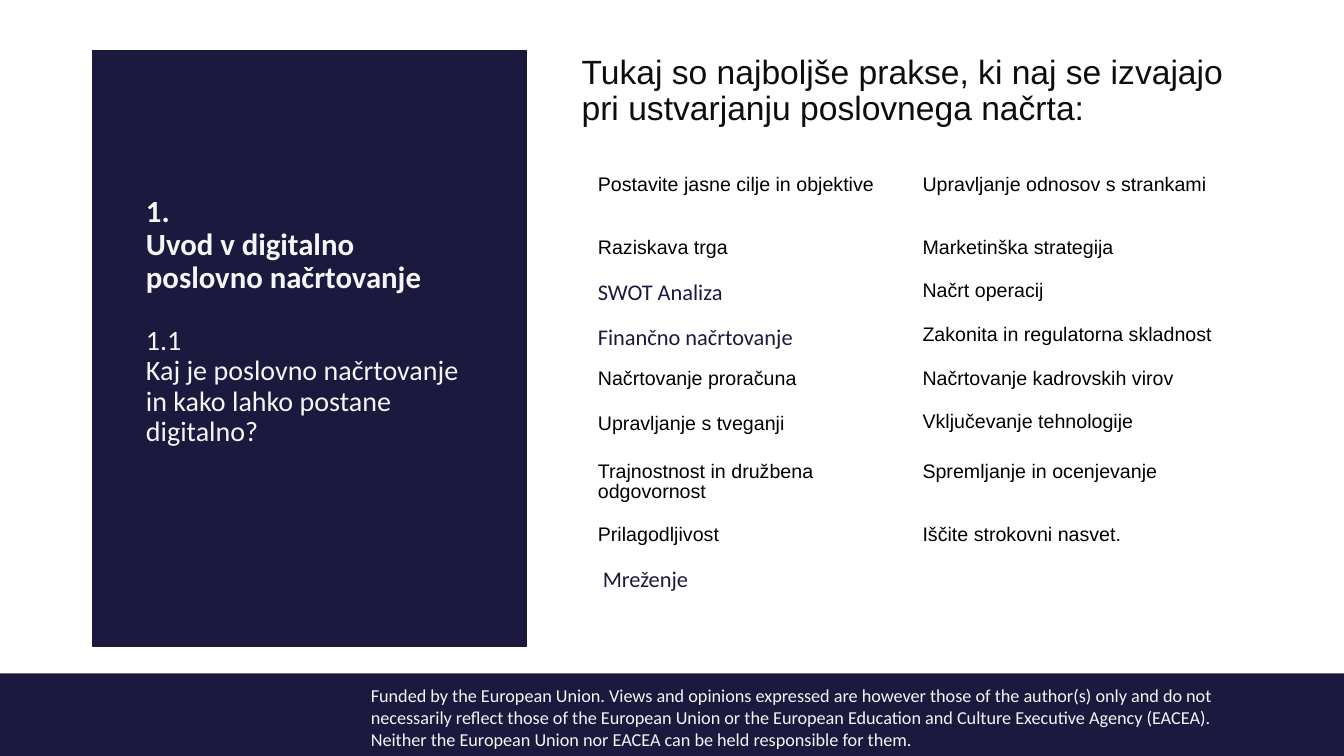
from pptx import Presentation
from pptx.dml.color import RGBColor
from pptx.enum.shapes import MSO_SHAPE as SHAPE
from pptx.enum.text import MSO_ANCHOR as ANCHOR
from pptx.util import Inches, Pt

NAVY, PALE, INK, BLACK = "1B193E", "F5F5F5", "0D0D0D", "000000"

FUNDING = (
    "Funded by the European Union. Views and opinions expressed are however those "
    "of the author(s) only and do not necessarily reflect those of the European Union "
    "or the European Education and Culture Executive Agency (EACEA). Neither the "
    "European Union nor EACEA can be held responsible for them."
)
# Row height, left practice, right practice
PRACTICES = [
    (0.63, "Postavite jasne cilje in objektive", "Upravljanje odnosov s strankami"),
    (0.42, "Raziskava trga", "Marketinška strategija"),
    (0.44, "SWOT Analiza", "Načrt operacij"),
    (0.44, "Finančno načrtovanje", "Zakonita in regulatorna skladnost"),
    (0.42, "Načrtovanje proračuna", "Načrtovanje kadrovskih virov"),
    (0.5, "Upravljanje s tveganji", "Vključevanje tehnologije"),
    (0.59, "Trajnostnost in družbena odgovornost", "Spremljanje in ocenjevanje"),
    (0.42, "Prilagodljivost", "Iščite strokovni nasvet."),
    (0.44, " Mreženje", ""),
]
HIGHLIGHTED = {"SWOT Analiza", "Finančno načrtovanje", " Mreženje"}
FULL_SPACING = {"Upravljanje s tveganji"}


def rgb(value):
    return RGBColor.from_string(value)


def write(tf, text, size, color, font="Calibri", bold=False, spacing=0.9):
    """Fill a text frame, one paragraph per line of text."""
    tf.word_wrap = True
    tf.text = text
    for p in tf.paragraphs:
        p.line_spacing = spacing
        for r in p.runs:
            r.font.name = font
            r.font.size = Pt(size)
            r.font.bold = bold
            r.font.color.rgb = rgb(color)


def add_text(slide, x, y, w, h, text, size, color, **style):
    sp = slide.shapes.add_textbox(Inches(x), Inches(y), Inches(w), Inches(h))
    write(sp.text_frame, text, size, color, **style)
    return sp


def add_block(slide, x, y, w, h):
    """Add a plain navy rectangle."""
    sp = slide.shapes.add_shape(
        SHAPE.RECTANGLE, Inches(x), Inches(y), Inches(w), Inches(h))
    sp.shadow.inherit = False
    sp.fill.solid()
    sp.fill.fore_color.rgb = rgb(NAVY)
    sp.line.fill.background()
    return sp


def add_chapter_panel(slide, x, y, w, h):
    panel = add_block(slide, x, y, w, h)
    panel.line.color.rgb = rgb(NAVY)
    panel.line.width = Pt(1)
    inset = 0.43
    text_w = w - 2 * inset - 0.01
    chapter = add_text(slide, x + inset, y + 1.45, text_w, 1.03,
                       "1.\nUvod v digitalno poslovno načrtovanje",
                       22, PALE, bold=True)
    chapter.text_frame.vertical_anchor = ANCHOR.BOTTOM
    add_text(slide, x + inset, y + 2.69, text_w, 2.81,
             "1.1\nKaj je poslovno načrtovanje in kako lahko postane digitalno?",
             20, PALE)


def add_footer(slide, x, y, w, h):
    add_block(slide, x, y, w, h)
    add_text(slide, x + 3.58, y + 0.06, 8.84, h - 0.06, FUNDING, 13, PALE, spacing=1)


def add_practice_table(slide, x, y, w):
    height = sum(row[0] for row in PRACTICES)
    table = slide.shapes.add_table(
        len(PRACTICES), 2, Inches(x), Inches(y), Inches(w), Inches(height)).table
    table.first_row = table.horz_banding = False
    for col in table.columns:
        col.width = Inches(w / 2)
    for row, (row_h, *texts) in zip(table.rows, PRACTICES):
        row.height = Inches(row_h)
        for cell, text in zip(row.cells, texts):
            cell.fill.background()
            cell.margin_left = cell.margin_right = Inches(0.1)
            cell.margin_top = cell.margin_bottom = Inches(0.1)
            look = (16, NAVY, "Calibri") if text in HIGHLIGHTED else (14, BLACK, "Arial")
            write(cell.text_frame, text, *look,
                  spacing=1 if text in FULL_SPACING else 0.9)


def add_practices(slide, x, y, w, h):
    add_text(slide, x, y, w, h,
             "Tukaj so najboljše prakse, ki naj se izvajajo pri ustvarjanju "
             "poslovnega načrta:", 24, INK, font="Arial")
    add_practice_table(slide, x + 0.16, y + 1.14, 6.44)


def main():
    prs = Presentation()
    prs.slide_width, prs.slide_height = Inches(13.33), Inches(7.5)
    slide = prs.slides.add_slide(prs.slide_layouts[6])
    add_chapter_panel(slide, 0.92, 0.5, 4.3, 5.91)
    add_footer(slide, 0, 6.68, 13.33, 0.82)
    add_practices(slide, 5.67, 0.5, 6.75, 5.91)
    prs.save("out.pptx")


if __name__ == "__main__":
    main()
